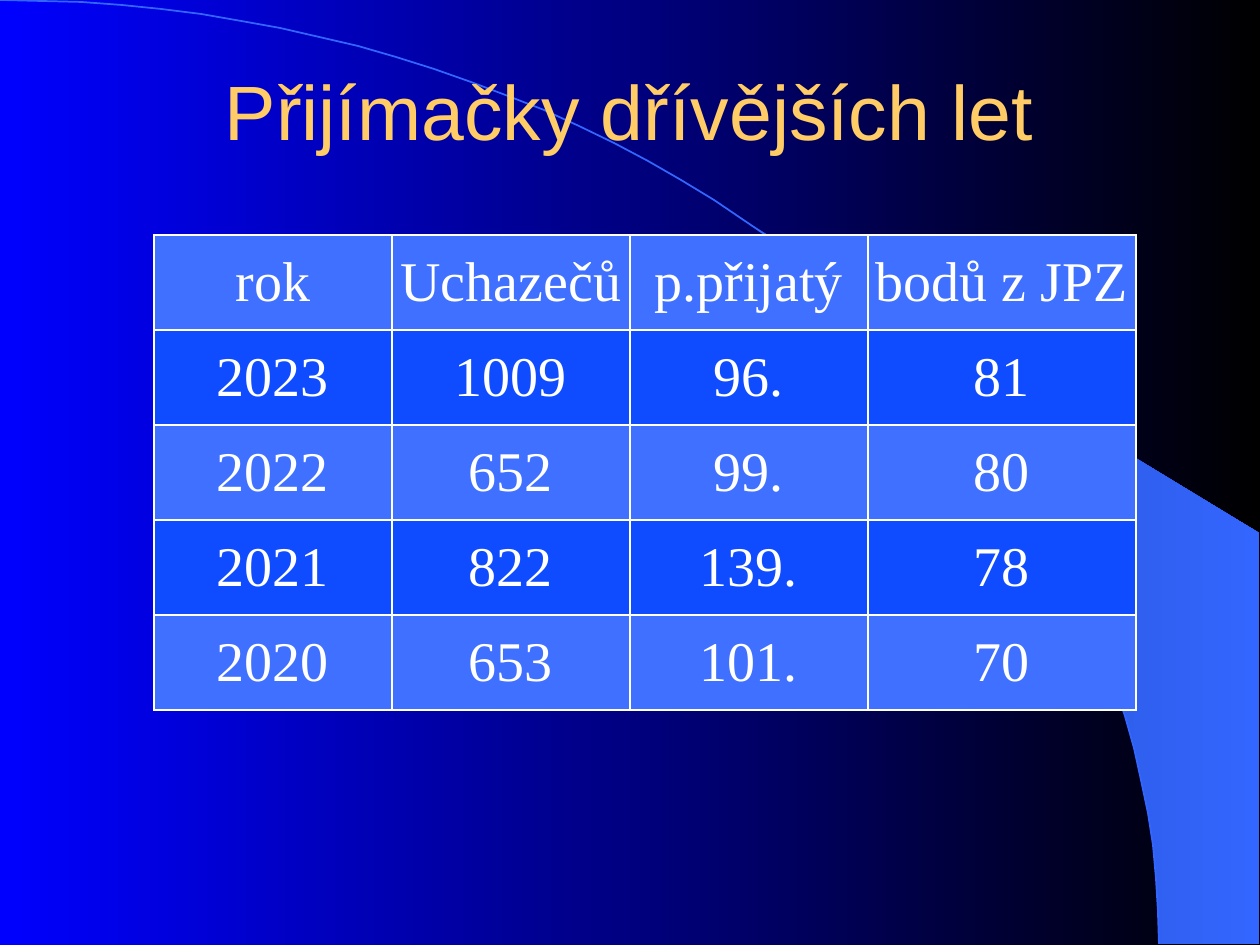
"""Build a slide with a table of past entrance exam results on a blue gradient."""
from math import cos, radians, sin

from lxml import etree
from pptx import Presentation
from pptx.dml.color import RGBColor
from pptx.enum.text import MSO_ANCHOR, PP_ALIGN
from pptx.oxml.ns import qn
from pptx.util import Pt

MIDDLE, CENTER = MSO_ANCHOR.MIDDLE, PP_ALIGN.CENTER
PX = 914400 / 126
WHITE, GOLD, BLUE = "FFFFFF", "FFCC66", "3366FF"
ROW_FILLS = ["4070FF", "104CFF"]
ARC_W, ARC_H = 1159, 944
COLS = [238, 238, 238, 268]
ROW_H = 95
ROWS = [
    ["rok", "Uchazečů", "p.přijatý", "bodů z JPZ"],
    ["2023", "1009", "96.", "81"],
    ["2022", "652", "99.", "80"],
    ["2021", "822", "139.", "78"],
    ["2020", "653", "101.", "70"],
]


def rgb(value):
    return RGBColor.from_string(value)


def write(tf, text, color, **font):
    p = tf.paragraphs[0]
    p.alignment = CENTER
    r = p.add_run()
    r.text = text
    r.font.color.rgb = rgb(color)
    for name, value in font.items():
        setattr(r.font, name, value)


prs = Presentation()
prs.slide_width, prs.slide_height = round(1260 * PX), round(945 * PX)
s = prs.slides.add_slide(prs.slide_layouts[6])

arc = [(round(ARC_W * sin(radians(a))), round(ARC_H * (1 - cos(radians(a)))))
       for a in range(0, 91, 2)]
fan_points = arc[20:] + [(1259, 944), (1259, 533)]
shapes = []
for points, close in [(fan_points, True), (arc, False)]:
    fb = s.shapes.build_freeform(*points[0], scale=PX)
    fb.add_line_segments(points[1:], close=close)
    sp = fb.convert_to_shape()
    sp.shadow.inherit = False
    shapes.append(sp)
fan, curve = shapes
fan.line.fill.background()
curve.fill.background()
curve.line.color.rgb = rgb(BLUE)
curve.line.width = Pt(1)

for fill, colors in [(s.background.fill, ["0000FF", "000000"]),
                     (fan.fill, ["2449B6", BLUE])]:
    fill.gradient()
    fill.gradient_angle = 0
    for i, (stop, color) in enumerate(zip(fill.gradient_stops, colors)):
        stop.position = i
        stop.color.rgb = rgb(color)

title = s.shapes.add_textbox(*[round(v * PX) for v in (94, 45, 1071, 129)])
tf = title.text_frame
tf.word_wrap = True
tf.vertical_anchor = MIDDLE
write(tf, "Přijímačky dřívějších let", GOLD, size=Pt(44), name="Arial")

box = [round(v * PX) for v in (154, 235, sum(COLS), ROW_H * len(ROWS))]
table = s.shapes.add_table(len(ROWS), len(COLS), *box).table
table.first_row = table.horz_banding = False
for column, width in zip(table.columns, COLS):
    column.width = round(width * PX)
for i, row in enumerate(ROWS):
    table.rows[i].height = round(ROW_H * PX)
    for j, text in enumerate(row):
        cell = table.cell(i, j)
        cell.vertical_anchor = MIDDLE
        margins = {"left": 1, "right": 1, "top": 1, "bottom": 0}
        for side, value in margins.items():
            setattr(cell, f"margin_{side}", round(value * PX))
        write(cell.text_frame, text, WHITE, size=Pt(32), name="Times New Roman")
        tc_pr = cell._tc.get_or_add_tcPr()
        for tag in ("a:lnL", "a:lnR", "a:lnT", "a:lnB"):
            ln = etree.SubElement(tc_pr, qn(tag), w=str(Pt(1)))
            solid = etree.SubElement(ln, qn("a:solidFill"))
            etree.SubElement(solid, qn("a:srgbClr"), val=WHITE)
        cell.fill.solid()
        cell.fill.fore_color.rgb = rgb(ROW_FILLS[i % 2])

prs.save("out.pptx")
